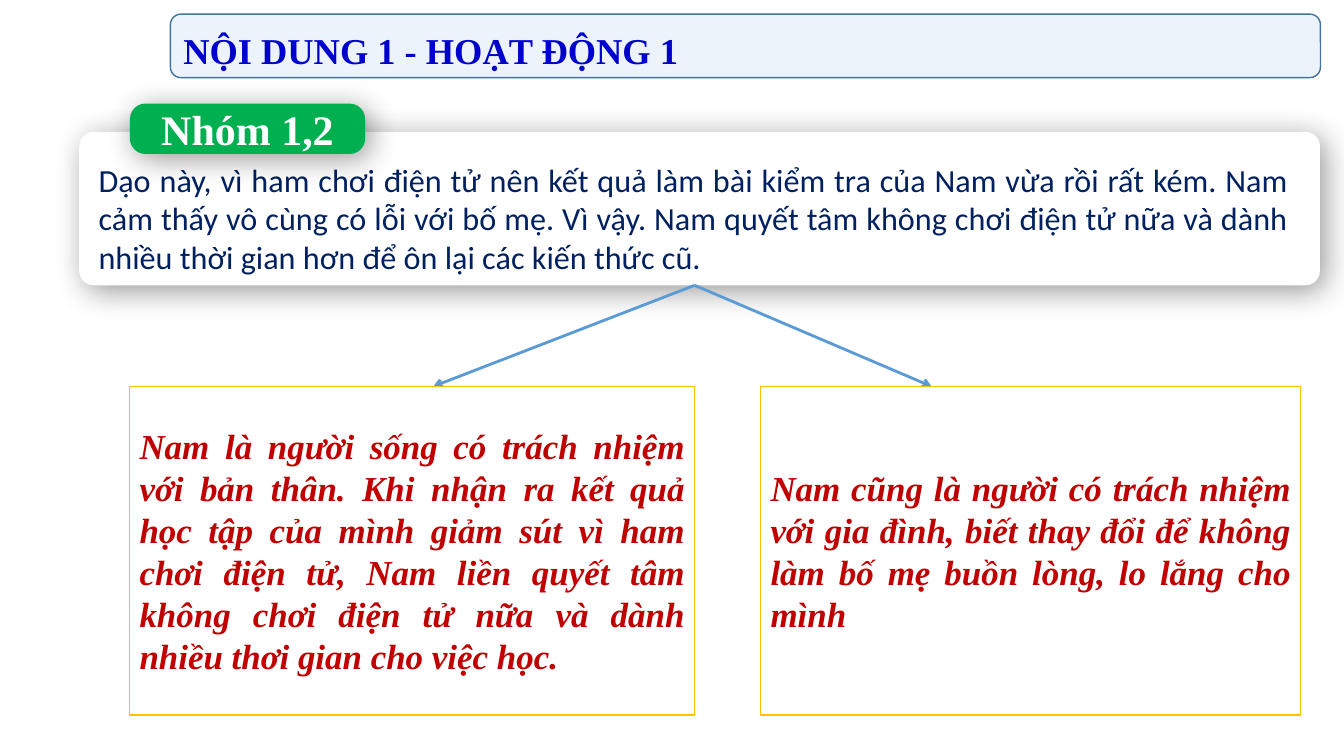
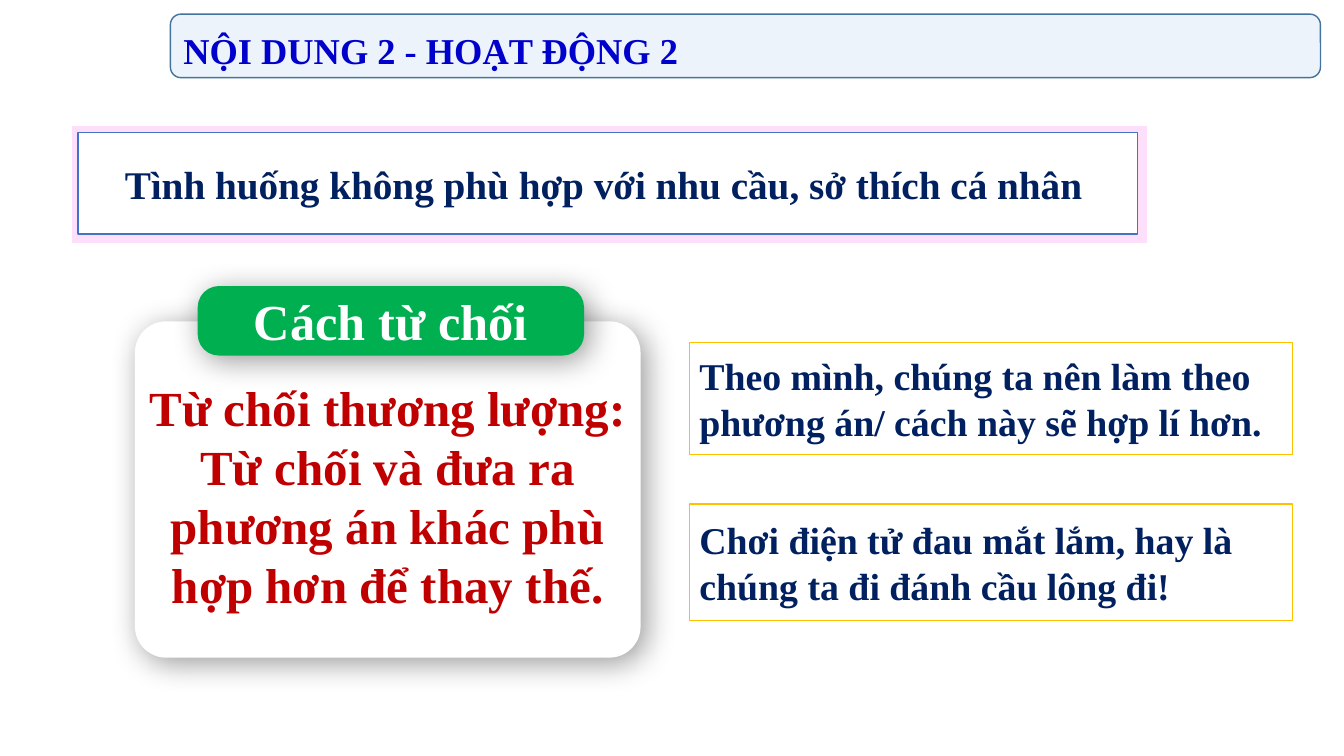
from dataclasses import dataclass

from lxml.etree import SubElement
from pptx import Presentation
from pptx.dml.color import RGBColor
from pptx.enum.shapes import MSO_CONNECTOR, MSO_SHAPE
from pptx.enum.text import MSO_ANCHOR, PP_ALIGN
from pptx.oxml.ns import qn
from pptx.util import Pt

SERIF = "Times New Roman"
SANS = "Calibri"
WHITE = "FFFFFF"
NAVY = "002060"
RED = "C00000"
BLUE = "0000CC"
GREEN = "00B050"
GOLD = "FFC000"
ARROW = "5B9BD5"
BAND_FILL = "ECF3FA"
BAND_LINE = "43739E"
FRAME_PINK = "FDDFFC"
FRAME_LINE = "4472C4"


@dataclass(frozen=True)
class Box:
    left: float
    top: float
    width: float
    height: float

    @property
    def bottom(self) -> float:
        return self.top + self.height

    def lengths(self) -> list:
        return [Pt(v) for v in (self.left, self.top, self.width, self.height)]


@dataclass(frozen=True)
class Label:
    text: str
    box: Box
    size: float
    color: str = NAVY
    font: str = SERIF
    align: PP_ALIGN = PP_ALIGN.CENTER
    bold: bool = True
    italic: bool = False


@dataclass(frozen=True)
class Card:
    box: Box
    body: Label
    badge: Label


TITLE_BOX = Box(121.7, 10.1, 821.5, 45.4)

GROUP_CARD = Card(
    Box(56.6, 94.2, 886.2, 109.6),
    Label("Dạo này, vì ham chơi điện tử nên kết quả làm bài kiểm tra của Nam vừa rồi rất kém. "
          "Nam cảm thấy vô cùng có lỗi với bố mẹ. Vì vậy. Nam quyết tâm không chơi điện tử nữa "
          "và dành nhiều thời gian hơn để ôn lại các kiến thức cũ.",
          Box(63.3, 110.9, 865.4, 90.7), 23, font=SANS, align=PP_ALIGN.JUSTIFY, bold=False),
    Label("Nhóm 1,2", Box(92.8, 74, 168, 36), 30, WHITE),
)

REFUSAL_CARD = Card(
    Box(96.4, 229.5, 361.2, 240.3),
    Label("Từ chối thương lượng: Từ chối và đưa ra phương án khác phù hợp hơn để thay thế.",
          Box(96.4, 266.4, 361.2, 177.1), 35, RED),
    Label("Cách từ chối", Box(141.2, 204.3, 276, 49.7), 36, WHITE),
)

ANSWER_FORMAT = dict(size=25, color=RED, align=PP_ALIGN.JUSTIFY, italic=True)
ANSWERS = [
    Label("Nam là người sống có trách nhiệm với bản thân. Khi nhận ra kết quả học tập của mình "
          "giảm sút vì ham chơi điện tử, Nam liền quyết tâm không chơi điện tử nữa và dành "
          "nhiều thơi gian cho việc học.",
          Box(92.6, 276, 403.6, 234.7), **ANSWER_FORMAT),
    Label("Nam cũng là người có trách nhiệm với gia đình, biết thay đổi để không làm bố mẹ "
          "buồn lòng, lo lắng cho mình",
          Box(543.3, 276, 385.7, 234.7), **ANSWER_FORMAT),
]
ARROW_START_X = 496.2
ARROW_END_XS = [309.6, 665.3]

EXAMPLES = [
    Label("Theo mình, chúng ta nên làm theo phương án/ cách này sẽ hợp lí hơn.",
          Box(492.5, 244.7, 430.7, 79.9), 27, align=PP_ALIGN.LEFT),
    Label("Chơi điện tử đau mắt lắm, hay là chúng ta đi đánh cầu lông đi!",
          Box(492.5, 360, 430.7, 83.2), 27, align=PP_ALIGN.LEFT),
]

OUTER_FRAME = Box(50.6, 89.3, 769.4, 84.6)
INNER_FRAME = Box(55.7, 94.7, 757, 72.6)
SITUATION = Label("Tình huống không phù hợp với nhu cầu, sở thích cá nhân",
                  Box(60.5, 110.9, 740.9, 41), 28)


def rgb(color: str) -> RGBColor:
    return RGBColor.from_string(color)


def write(sp, text: str, *, size: float, color: str, font: str = SERIF,
          align: PP_ALIGN = PP_ALIGN.LEFT, anchor: MSO_ANCHOR = MSO_ANCHOR.MIDDLE,
          bold: bool = True, italic: bool = False, spacing: float = 1.0) -> None:
    tf = sp.text_frame
    tf.word_wrap = True
    tf.vertical_anchor = anchor
    p = tf.paragraphs[0]
    p.alignment = align
    p.line_spacing = spacing
    r = p.add_run()
    r.text = text
    r.font.name = font
    r.font.size = Pt(size)
    r.font.bold = bold
    r.font.italic = italic
    r.font.color.rgb = rgb(color)


def write_label(sp, label: Label, anchor: MSO_ANCHOR = MSO_ANCHOR.MIDDLE) -> None:
    write(sp, label.text, size=label.size, color=label.color, font=label.font,
          align=label.align, anchor=anchor, bold=label.bold, italic=label.italic)


def add_box(s, box: Box, fill: str, line: str | None = None,
            kind: MSO_SHAPE = MSO_SHAPE.RECTANGLE, radius: float | None = None):
    sp = s.shapes.add_shape(kind, *box.lengths())
    sp.shadow.inherit = False
    sp.fill.solid()
    sp.fill.fore_color.rgb = rgb(fill)
    if line:
        sp.line.color.rgb = rgb(line)
        sp.line.width = Pt(1)
    else:
        sp.line.fill.background()
    if radius is not None:
        sp.adjustments[0] = radius
    return sp


def add_shadow(sp) -> None:
    effects = sp._element.spPr.find(qn("a:effectLst"))
    shadow = SubElement(effects, qn("a:outerShdw"), blurRad=str(Pt(22)), dist=str(Pt(5)),
                        dir=str(45 * 60000), algn="tl", rotWithShape="0")
    color = SubElement(shadow, qn("a:srgbClr"), val="000000")
    SubElement(color, qn("a:alpha"), val="40000")


def add_text(s, label: Label) -> None:
    sp = s.shapes.add_textbox(*label.box.lengths())
    write_label(sp, label, MSO_ANCHOR.TOP)


def add_outlined(s, label: Label) -> None:
    write_label(add_box(s, label.box, WHITE, GOLD), label)


def add_card(s, card: Card) -> None:
    rounded = MSO_SHAPE.ROUNDED_RECTANGLE
    add_shadow(add_box(s, card.box, WHITE, kind=rounded, radius=0.093))
    add_text(s, card.body)
    badge = add_box(s, card.badge.box, GREEN, kind=rounded, radius=0.307)
    add_shadow(badge)
    write_label(badge, card.badge)


def add_arrow(s, x1: float, y1: float, x2: float, y2: float) -> None:
    c = s.shapes.add_connector(MSO_CONNECTOR.STRAIGHT, Pt(x1), Pt(y1), Pt(x2), Pt(y2))
    c.line.color.rgb = rgb(ARROW)
    c.line.width = Pt(2)
    SubElement(c.line._get_or_add_ln(), qn("a:tailEnd"), type="arrow")
    SubElement(c._element.spPr, qn("a:effectLst"))


def add_titled_slide(prs, title: str):
    s = prs.slides.add_slide(prs.slide_layouts[6])
    band = add_box(s, TITLE_BOX, BAND_FILL, BAND_LINE, MSO_SHAPE.ROUNDED_RECTANGLE)
    write(band, title, size=26, color=BLUE, spacing=1.2)
    return s


def build_group_slide(prs) -> None:
    s = add_titled_slide(prs, "NỘI DUNG 1 - HOẠT ĐỘNG 1")
    add_card(s, GROUP_CARD)
    for answer, end_x in zip(ANSWERS, ARROW_END_XS):
        add_arrow(s, ARROW_START_X, GROUP_CARD.box.bottom, end_x, answer.box.top)
        add_outlined(s, answer)


def build_refusal_slide(prs) -> None:
    s = add_titled_slide(prs, "NỘI DUNG 2 - HOẠT ĐỘNG 2")
    add_card(s, REFUSAL_CARD)
    for example in EXAMPLES:
        add_outlined(s, example)
    add_box(s, OUTER_FRAME, FRAME_PINK, WHITE)
    add_box(s, INNER_FRAME, WHITE, FRAME_LINE)
    add_text(s, SITUATION)


def main() -> None:
    prs = Presentation()
    prs.slide_width, prs.slide_height = Pt(960), Pt(540)
    build_group_slide(prs)
    build_refusal_slide(prs)
    prs.save("out.pptx")


if __name__ == "__main__":
    main()
